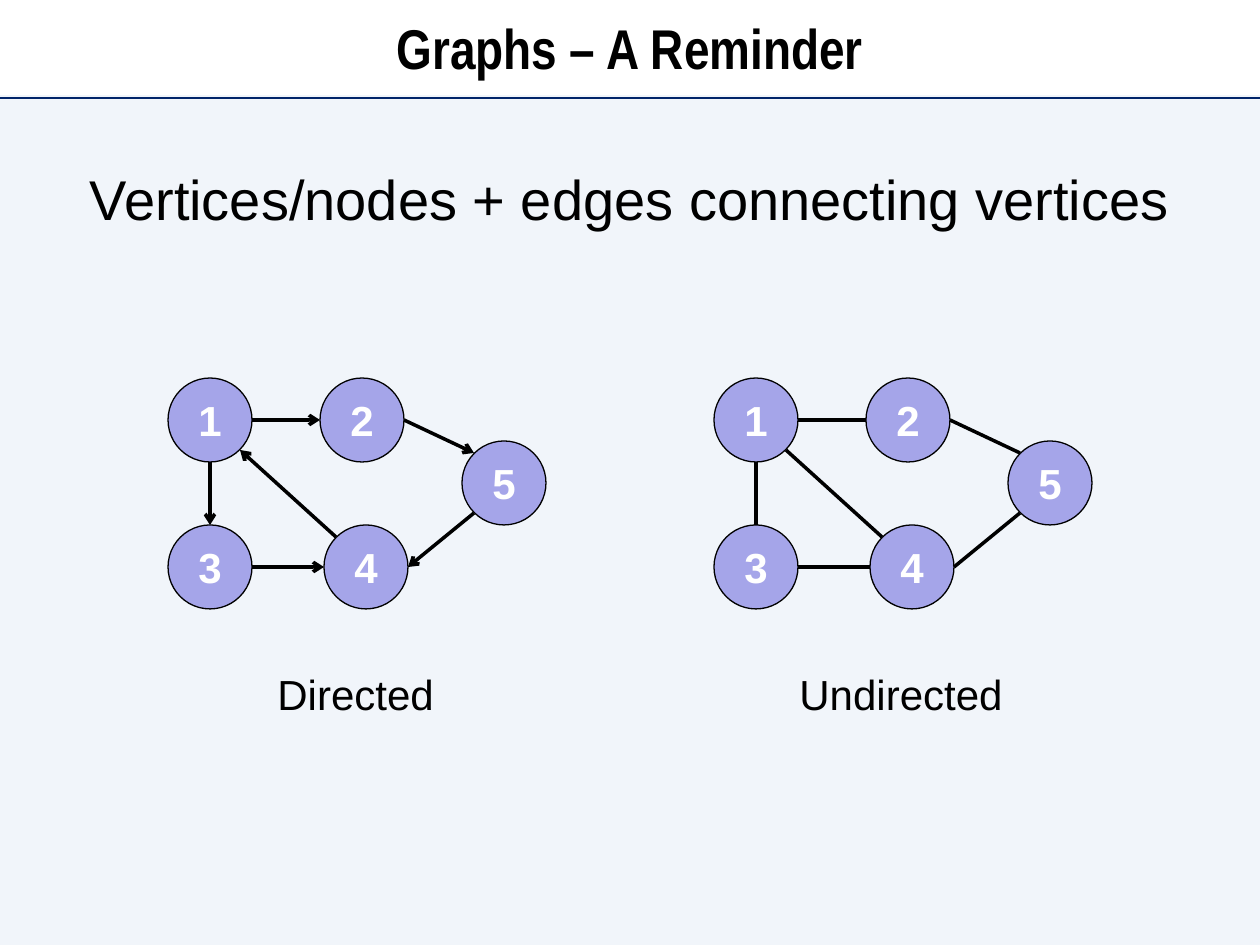
from dataclasses import dataclass

from lxml import etree
from pptx import Presentation
from pptx.dml.color import RGBColor
from pptx.enum.shapes import MSO_CONNECTOR, MSO_SHAPE
from pptx.enum.text import MSO_ANCHOR, PP_ALIGN
from pptx.oxml.ns import qn
from pptx.util import Pt

STRAIGHT = MSO_CONNECTOR.STRAIGHT
OVAL = MSO_SHAPE.OVAL
LEFT, CENTER = PP_ALIGN.LEFT, PP_ALIGN.CENTER
TOP, MIDDLE = MSO_ANCHOR.TOP, MSO_ANCHOR.MIDDLE
EMU_PER_PX = 914400 / 126


@dataclass(frozen=True)
class Theme:
    background: RGBColor = RGBColor(0xF1, 0xF5, 0xFA)
    white: RGBColor = RGBColor(0xFF, 0xFF, 0xFF)
    ink: RGBColor = RGBColor(0, 0, 0)
    rule: RGBColor = RGBColor(0x00, 0x24, 0x69)
    node: RGBColor = RGBColor(0xA5, 0xA5, 0xE9)
    title_font: str = "Arial Narrow"
    body_font: str = "Arial"
    heading_size: int = 32
    graph_size: int = 24


THEME = Theme()


def px(*lengths):
    return [round(length * EMU_PER_PX) for length in lengths]


def write(shape, text, size, color=THEME.ink, font=THEME.body_font, bold=False,
          align=CENTER, anchor=MIDDLE, wrap=True):
    frame = shape.text_frame
    frame.text = text
    frame.word_wrap = wrap
    frame.vertical_anchor = anchor
    paragraph = frame.paragraphs[0]
    paragraph.alignment = align
    run_font = paragraph.runs[0].font
    for name, value in {"name": font, "size": Pt(size), "bold": bold}.items():
        setattr(run_font, name, value)
    run_font.color.rgb = color


prs = Presentation()
prs.slide_width, prs.slide_height = px(1260, 945)
slide = prs.slides.add_slide(prs.slide_layouts[5])
slide.background.fill.solid()
slide.background.fill.fore_color.rgb = THEME.background

# Heading
title = slide.shapes.title
title.left, title.top, title.width, title.height = px(0, 0, 1260, 95)
title.fill.solid()
title.fill.fore_color.rgb = THEME.white
write(title, "Graphs – A Reminder", THEME.heading_size, font=THEME.title_font, bold=True)

title_rule = slide.shapes.add_connector(STRAIGHT, *px(0, 98, 1260, 98))
title_rule.line.color.rgb = THEME.rule
title_rule.line.width = Pt(1.5)
etree.SubElement(title_rule._element.spPr, qn("a:effectLst"))

definition = slide.shapes.add_textbox(*px(21, 158, 1218, 105))
write(definition, "Vertices/nodes + edges connecting vertices", THEME.heading_size, anchor=TOP)

# Both graphs share nodes and edges; points are relative to a node's corner
DIAMETER = 84
GRAPH_TOP = 378
NODES = {"1": (0, 0), "3": (0, 147), "2": (152, 0), "5": (294, 63), "4": (156, 147)}
RIM = {
    "top": (42, 0), "right": (84, 42), "bottom": (42, 84), "left": (0, 42),
    "top left": (12, 12), "bottom left": (12, 72), "bottom right": (72, 72),
}
EDGES = [
    ("1", "right", "2", "left"),
    ("3", "right", "4", "left"),
    ("1", "bottom", "3", "top"),
    ("2", "right", "5", "top left"),
    ("5", "bottom left", "4", "right"),
    ("4", "top left", "1", "bottom right"),
]
GRAPHS = [  # caption, graph left, caption left, caption width, directed
    ("Directed", 168, 265, 184, True),
    ("Undirected", 714, 787, 230, False),
]

for caption, graph_left, caption_left, caption_width, directed in GRAPHS:
    graph = slide.shapes.add_group_shape().shapes

    for number, (x, y) in NODES.items():
        node = graph.add_shape(OVAL, *px(graph_left + x, GRAPH_TOP + y, DIAMETER, DIAMETER))
        node.shadow.inherit = False
        node.fill.solid()
        node.fill.fore_color.rgb = THEME.node
        node.line.color.rgb = THEME.ink
        node.line.width = Pt(0.75)
        write(node, number, THEME.graph_size, THEME.white, bold=True, wrap=False)

    for source, source_rim, target, target_rim in EDGES:
        ends = []
        for number, rim in ((source, source_rim), (target, target_rim)):
            ends += [graph_left + NODES[number][0] + RIM[rim][0],
                     GRAPH_TOP + NODES[number][1] + RIM[rim][1]]
        edge = graph.add_connector(STRAIGHT, *px(*ends))
        edge.line.color.rgb = THEME.ink
        edge.line.width = Pt(2)
        if directed:
            etree.SubElement(edge.line._get_or_add_ln(), qn("a:tailEnd"), type="arrow")
        etree.SubElement(edge._element.spPr, qn("a:effectLst"))

    label = graph.add_textbox(*px(caption_left, 662, caption_width, 63))
    write(label, caption, THEME.graph_size, align=LEFT, anchor=TOP, wrap=False)

prs.save("out.pptx")
